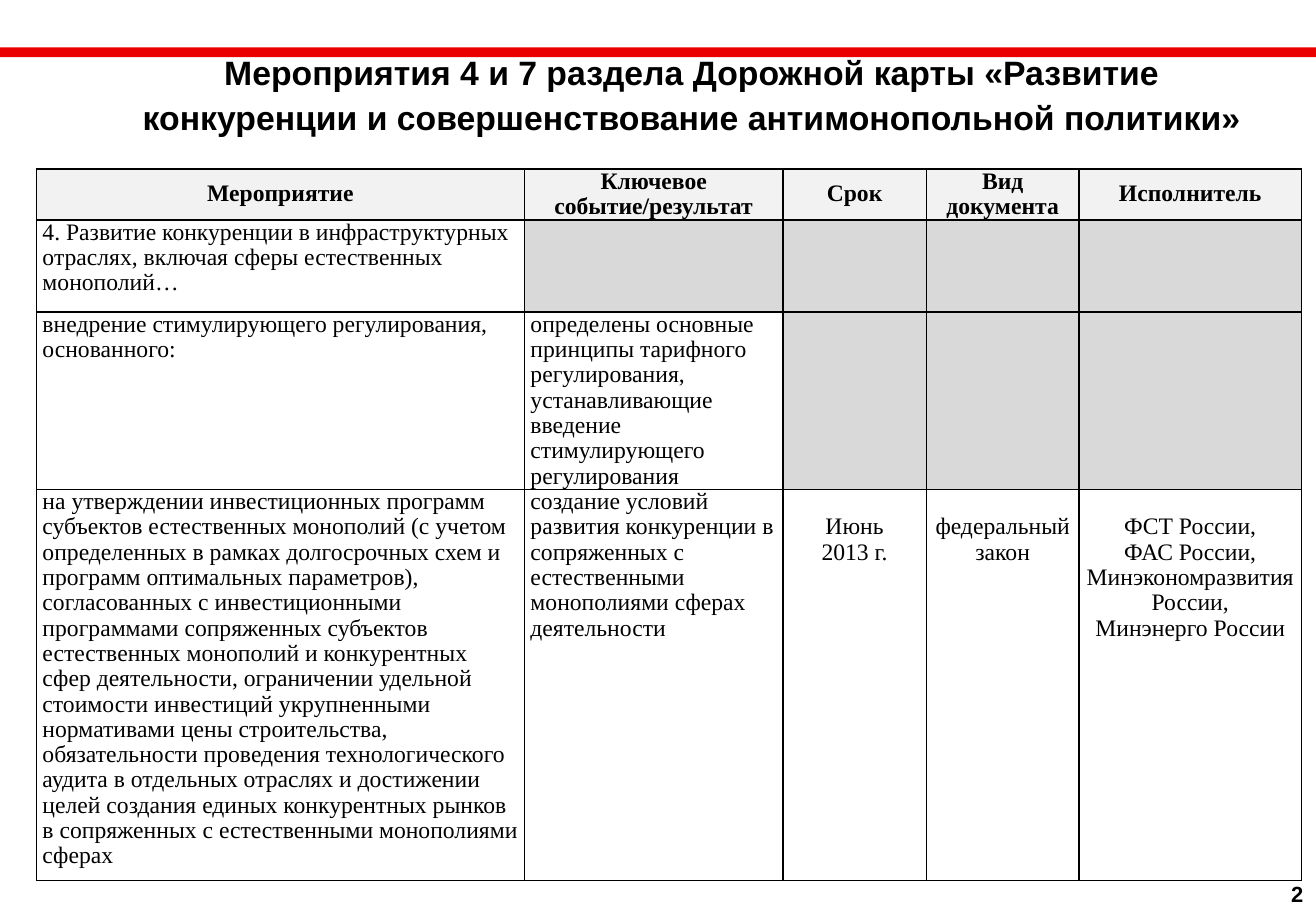
import pptx
import pptx.util
import pptx.dml.color
import pptx.enum.shapes
import pptx.enum.text
import pptx.oxml
import pptx.oxml.ns
from dataclasses import dataclass

Pt = pptx.util.Pt
Align = pptx.enum.text.PP_ALIGN
Anchor = pptx.enum.text.MSO_ANCHOR


@dataclass(frozen=True)
class Theme:
    red: str = "EB0000"
    black: str = "000000"
    white: str = "FFFFFF"
    pale: str = "F2F2F2"
    grey: str = "D9D9D9"
    sans: str = "Arial"
    serif: str = "Times New Roman"
    head: int = 20
    body: int = 14
    page: int = 13


THEME = Theme()
WIDTHS = [289.44, 153.36, 84.96, 90.72, 131.76]
HEIGHTS = [30.24, 54.72, 105.12, 231.84]
LEAD = 15

# Table wording; None marks a grey cell
HEADS = ["Мероприятие", "Ключевое событие/результат", "Срок",
         "Вид\nдокумента", "Исполнитель"]
ROWS = [
    ["4. Развитие конкуренции в инфраструктурных отраслях, включая сферы "
     "естественных монополий…", None, None, None, None],
    ["внедрение стимулирующего регулирования, основанного:",
     "определены основные принципы тарифного регулирования, "
     "устанавливающие введение стимулирующего регулирования",
     None, None, None],
    ["на утверждении инвестиционных программ субъектов естественных "
     "монополий (с учетом определенных в рамках долгосрочных схем и "
     "программ оптимальных параметров), согласованных с инвестиционными "
     "программами сопряженных субъектов естественных монополий и "
     "конкурентных сфер деятельности, ограничении удельной стоимости "
     "инвестиций укрупненными нормативами цены строительства, "
     "обязательности проведения технологического аудита в отдельных "
     "отраслях и достижении целей создания единых конкурентных рынков в "
     "сопряженных с естественными монополиями сферах",
     "создание условий развития конкуренции в сопряженных с "
     "естественными монополиями сферах деятельности",
     "Июнь\n2013 г.",
     "федеральный закон",
     "ФСТ России,\nФАС России,\nМинэкономразвития России,\n"
     "Минэнерго России"],
]


def paint(fill, color):
    fill.solid()
    fill.fore_color.rgb = pptx.dml.color.RGBColor.from_string(color)


def write(frame, text, font=THEME.sans, size=THEME.body, bold=False,
          align=Align.CENTER, lead=None):
    """Fill a text frame, one paragraph for each line of text."""
    for i, line in enumerate(text.split("\n")):
        para = frame.paragraphs[0] if i == 0 else frame.add_paragraph()
        para.alignment = align
        para.space_before = para.space_after = Pt(0)
        if lead:
            para.line_spacing = Pt(lead)
        run = para.add_run()
        run.text = line
        run.font.name = font
        run.font.size = Pt(size)
        run.font.bold = bold
        run.font.color.rgb = pptx.dml.color.RGBColor.from_string(THEME.black)


def place(shape, left, top, width, height):
    shape.left, shape.top = Pt(left), Pt(top)
    shape.width, shape.height = Pt(width), Pt(height)


def add_title(slide, text):
    title = slide.shapes.title
    place(title, 66.96, 25.92, 686.88, 62.64)
    frame = title.text_frame
    frame.word_wrap = True
    frame.auto_size = pptx.enum.text.MSO_AUTO_SIZE.NONE
    frame.vertical_anchor = Anchor.MIDDLE
    frame.margin_left = frame.margin_right = Pt(7.2)
    frame.margin_top, frame.margin_bottom = Pt(3.6), Pt(8.6)
    write(frame, text, size=THEME.head, bold=True, lead=26.7)


def add_bar(slide, width):
    bar = slide.shapes.add_shape(pptx.enum.shapes.MSO_SHAPE.RECTANGLE,
                                 0, Pt(28.08), width, Pt(5.76))
    bar.shadow.inherit = False
    paint(bar.fill, THEME.red)
    bar.line.fill.background()
    # The bar lies behind the title
    slide.shapes.title.element.addprevious(bar.element)


def add_edges(cell):
    props = cell._tc.get_or_add_tcPr()
    space = pptx.oxml.ns.nsdecls("a")
    for side in "LRTB":
        props.append(pptx.oxml.parse_xml(
            f'<a:ln{side} {space} w="{Pt(1)}"><a:solidFill>'
            f'<a:srgbClr val="{THEME.black}"/></a:solidFill></a:ln{side}>'))


def fill_cell(cell, text, row, col):
    add_edges(cell)
    cell.margin_left = cell.margin_right = Pt(3.6)
    # The three narrow columns start one line lower
    cell.margin_top = Pt(LEAD if row and col > 1 and text else 0)
    cell.margin_bottom = Pt(0)
    cell.vertical_anchor = Anchor.TOP if row else Anchor.MIDDLE
    if text is None:
        paint(cell.fill, THEME.grey)
        return
    paint(cell.fill, THEME.white if row else THEME.pale)
    write(cell.text_frame, text, font=THEME.serif, bold=row == 0, lead=LEAD,
          align=Align.LEFT if row and col < 2 else Align.CENTER)


def add_grid(slide):
    grid = slide.shapes.add_table(
        len(HEIGHTS), len(WIDTHS), Pt(21.6), Pt(100.08),
        Pt(sum(WIDTHS)), Pt(sum(HEIGHTS))).table
    grid.first_row = grid.horz_banding = False
    for column, width in zip(grid.columns, WIDTHS):
        column.width = Pt(width)
    for line, height in zip(grid.rows, HEIGHTS):
        line.height = Pt(height)
    for row, texts in enumerate([HEADS] + ROWS):
        for col, text in enumerate(texts):
            fill_cell(grid.cell(row, col), text, row, col)


def add_page(slide, text):
    box = slide.shapes.add_textbox(Pt(758.16), Pt(518.4), Pt(22.32), Pt(21.6))
    box.text_frame.word_wrap = False
    write(box.text_frame, text, size=THEME.page, bold=True)


def main():
    deck = pptx.Presentation()
    deck.slide_width, deck.slide_height = Pt(780.48), Pt(540)
    slide = deck.slides.add_slide(deck.slide_layouts[5])
    paint(slide.background.fill, THEME.white)
    add_title(slide, "Мероприятия 4 и 7 раздела Дорожной карты «Развитие "
                     "конкуренции и совершенствование антимонопольной политики»")
    add_bar(slide, deck.slide_width)
    add_grid(slide)
    add_page(slide, "2")
    deck.save("out.pptx")


if __name__ == "__main__":
    main()
